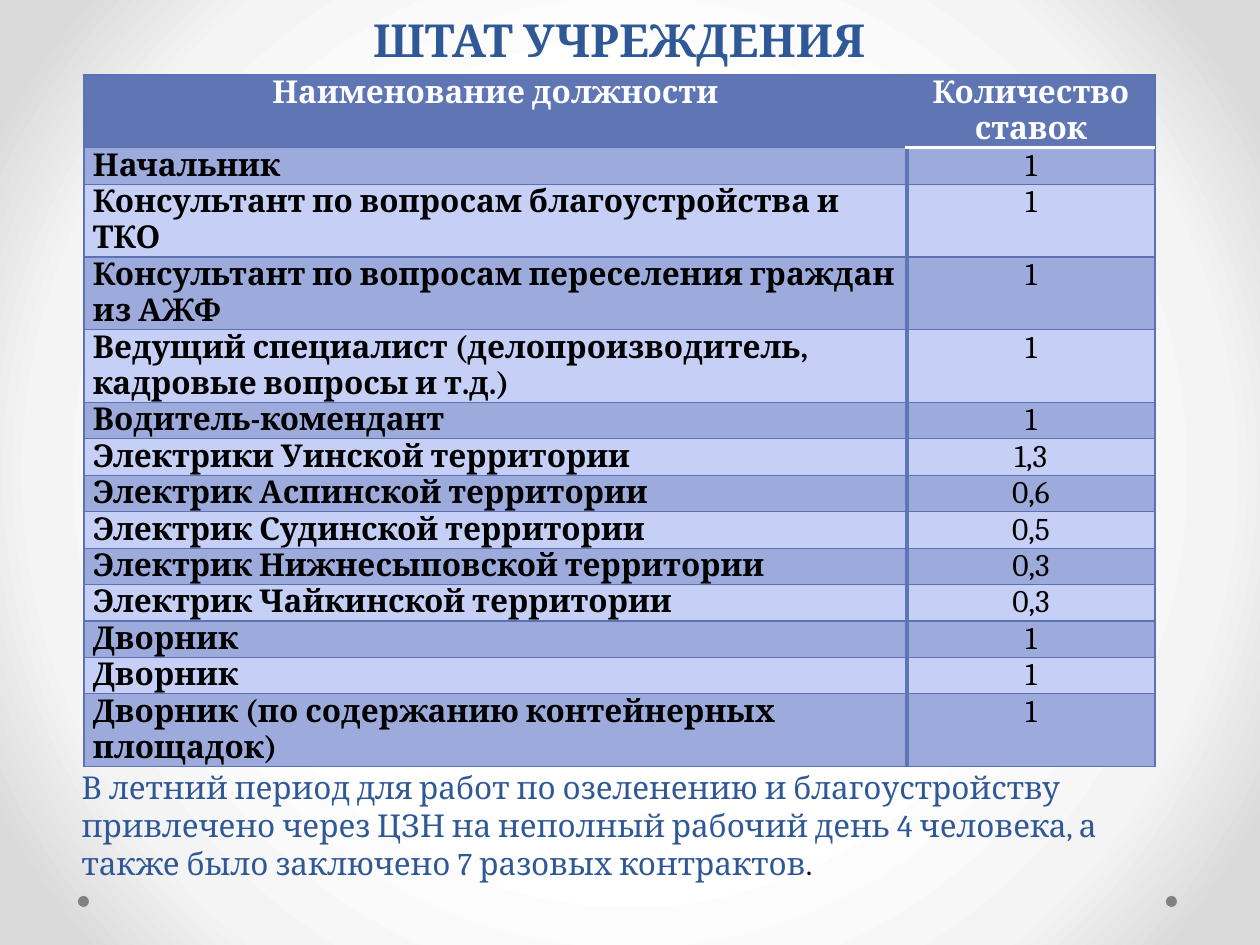
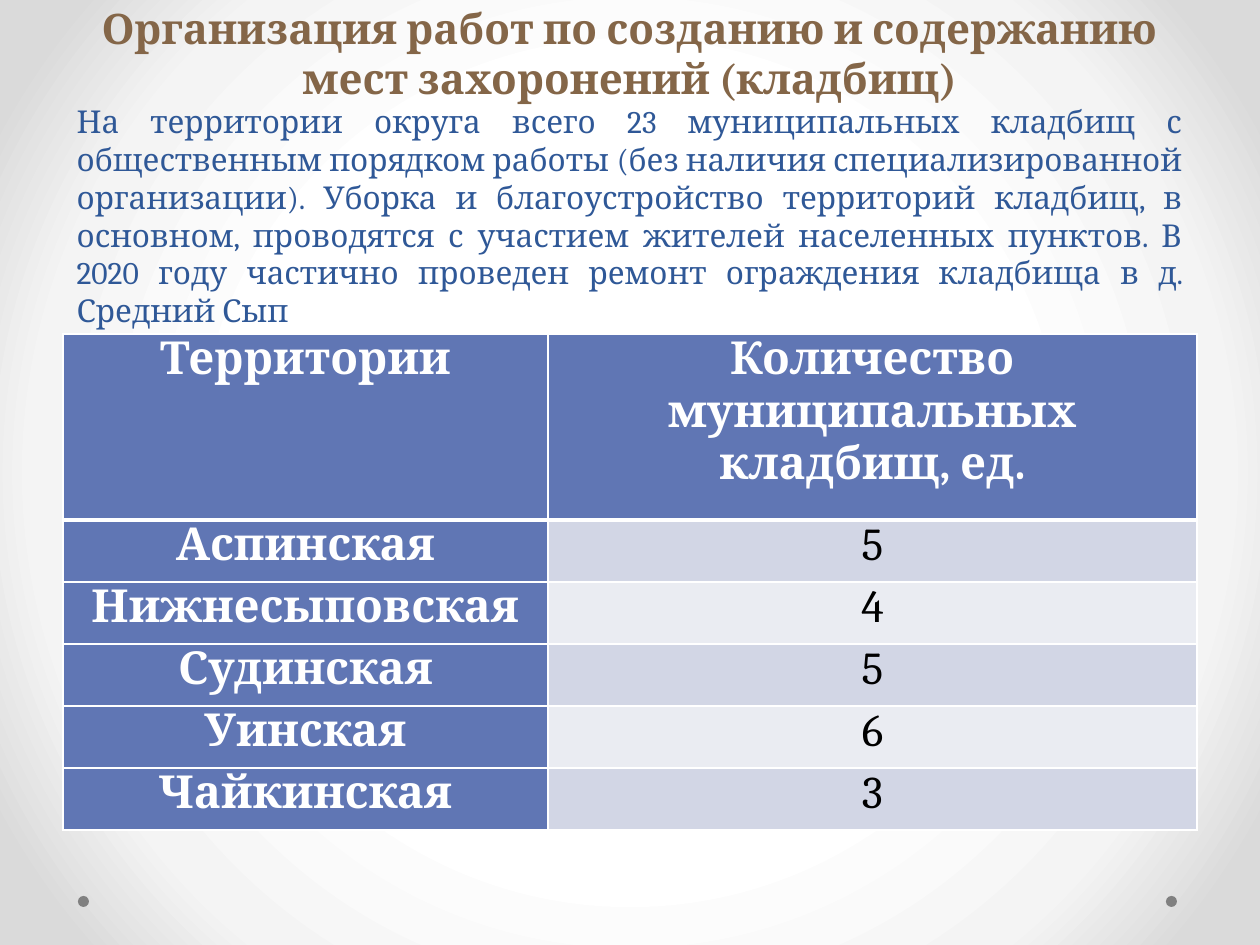
from dataclasses import dataclass

from pptx import Presentation
from pptx.dml.color import RGBColor
from pptx.enum.shapes import MSO_SHAPE
from pptx.enum.text import MSO_ANCHOR, MSO_AUTO_SIZE, PP_ALIGN
from pptx.oxml import parse_xml
from pptx.oxml.ns import nsdecls
from pptx.util import Emu, Pt

LEFT, CENTER, JUSTIFY = PP_ALIGN.LEFT, PP_ALIGN.CENTER, PP_ALIGN.JUSTIFY
MIDDLE, TOP = MSO_ANCHOR.MIDDLE, MSO_ANCHOR.TOP
NO_FIT = MSO_AUTO_SIZE.NONE
OVAL = MSO_SHAPE.OVAL


@dataclass(frozen=True)
class Theme:
    font: str = "Cambria"
    navy: str = "2F5897"
    brown: str = "846648"
    accent: str = "6076B4"
    edge: str = "5C72B2"
    white: str = "FFFFFF"
    black: str = "000000"
    dot: str = "808080"
    blues: tuple[str, str] = ("9DABDC", "C6CFF6")
    grays: tuple[str, str] = ("D2D6E5", "EAECF2")
    glow: tuple[tuple[int, str], ...] = ((50, "FFFFFF"), (76, "F4F4F4"), (92, "DADADA"))
    large: int = 26
    medium: int = 24
    small: int = 18


THEME = Theme()


@dataclass(frozen=True)
class Box:
    left: int
    top: int
    width: int
    height: int


@dataclass(frozen=True)
class Type:
    size: int
    ink: str
    bold: bool = False
    align: PP_ALIGN = CENTER


@dataclass(frozen=True)
class Line:
    ink: str
    width: float


@dataclass(frozen=True)
class Column:
    width: int
    fills: tuple[str, str]
    type: Type
    rule: Line  # line under the heading


@dataclass(frozen=True)
class Grid:
    left: int
    top: int
    columns: tuple[Column, ...]
    heights: tuple[int, ...]
    head: Type
    line: Line
    inner: Line


def px(length: int) -> Emu:
    return Emu(round(length * 914400 / 126))


def place(shape, box: Box) -> None:
    shape.left, shape.top = px(box.left), px(box.top)
    shape.width, shape.height = px(box.width), px(box.height)


def paint(shape, ink: str) -> None:
    shape.fill.solid()
    shape.fill.fore_color.rgb = RGBColor.from_string(ink)


def style(frame, look: Type) -> None:
    for para in frame.paragraphs:
        para.alignment = look.align
        para.space_before = Pt(0)
        for run in para.runs:
            font = run.font
            font.name, font.size, font.bold = THEME.font, Pt(look.size), look.bold
            font.color.rgb = RGBColor.from_string(look.ink)


def fill_holder(holder, text: str, box: Box, look: Type, anchor: MSO_ANCHOR) -> None:
    place(holder, box)
    frame = holder.text_frame
    frame.text = text
    frame.word_wrap = True
    frame.auto_size = NO_FIT
    frame.vertical_anchor = anchor
    style(frame, look)


def add_body(slide, text: str, box: Box, look: Type):
    """Fill the body placeholder with one plain paragraph without a bullet."""
    holder = slide.placeholders[1]
    fill_holder(holder, text, box, look, TOP)
    para = holder.text_frame.paragraphs[0]
    props = para._p.get_or_add_pPr()
    props.set("marL", "0")
    props.set("indent", "0")
    props.append(parse_xml(f"<a:buNone {nsdecls('a')}/>"))
    return para


def add_line(cell, side: str, line: Line) -> None:
    cell._tc.get_or_add_tcPr().append(parse_xml(
        f'<a:ln{side} {nsdecls("a")} w="{Pt(line.width)}"><a:solidFill>'
        f'<a:srgbClr val="{line.ink}"/></a:solidFill></a:ln{side}>'))


def add_grid(slide, grid: Grid, rows: list[tuple[str, ...]]) -> None:
    cols = grid.columns
    width = sum(col.width for col in cols)
    frame = slide.shapes.add_table(
        len(rows), len(cols), px(grid.left), px(grid.top), px(width), px(sum(grid.heights)))
    table = frame.table
    for c, col in enumerate(cols):
        table.columns[c].width = px(col.width)
    for r, texts in enumerate(rows):
        table.rows[r].height = px(grid.heights[r])
        for c, (col, text) in enumerate(zip(cols, texts)):
            cell = table.cell(r, c)
            cell.margin_left = cell.margin_right = px(9)
            cell.margin_top = cell.margin_bottom = 0
            cell.text = text
            style(cell.text_frame, col.type if r else grid.head)
            add_line(cell, "L", grid.inner if c else grid.line)
            add_line(cell, "R", grid.inner if c < len(cols) - 1 else grid.line)
            add_line(cell, "T", col.rule if r == 1 else grid.line)
            add_line(cell, "B", col.rule if r == 0 else grid.line)
            paint(cell, col.fills[(r - 1) % 2] if r else THEME.accent)


def dress_master(master, slide) -> None:
    """Give the master its glow and two dots, which are first drawn on a slide."""
    sheet = master.element.cSld
    for old in sheet.findall("{*}bg"):
        sheet.remove(old)
    stops = "".join(f'<a:gs pos="{pos * 1000}"><a:srgbClr val="{ink}"/></a:gs>'
                    for pos, ink in THEME.glow)
    sheet.insert(0, parse_xml(
        f'<p:bg {nsdecls("p", "a")}><p:bgPr><a:gradFill rotWithShape="1"><a:gsLst>{stops}'
        '</a:gsLst><a:path path="circle"><a:fillToRect l="50000" t="50000" r="50000" '
        'b="50000"/></a:path></a:gradFill><a:effectLst/></p:bgPr></p:bg>'))
    for num, left in enumerate((1166, 78), start=20):
        dot = slide.shapes.add_shape(OVAL, px(left), px(896), px(11), px(11))
        paint(dot, THEME.dot)
        dot.line.fill.background()
        dot.shadow.inherit = False
        dot.element.nvSpPr.cNvPr.set("id", str(num))
        sheet.spTree.append(dot.element)


STAFF = [
    ("Наименование должности", "Количество ставок"),
    ("Начальник", "1"),
    ("Консультант по вопросам благоустройства и ТКО", "1"),
    ("Консультант по вопросам переселения граждан из АЖФ", "1"),
    ("Ведущий специалист (делопроизводитель, кадровые вопросы и т.д.)", "1"),
    ("Водитель-комендант", "1"),
    ("Электрики Уинской территории", "1,3"),
    ("Электрик Аспинской территории", "0,6"),
    ("Электрик Судинской территории", "0,5"),
    ("Электрик Нижнесыповской территории", "0,3"),
    ("Электрик Чайкинской территории", "0,3"),
    ("Дворник", "1"),
    ("Дворник", "1"),
    ("Дворник (по содержанию контейнерных площадок)", "1"),
]
TALL = (0, 2, 3, 4, 13)  # staff rows with two lines of text

GRAVES = [
    ("Территории", "Количество муниципальных кладбищ, ед."),
    ("Аспинская", "5"),
    ("Нижнесыповская", "4"),
    ("Судинская", "5"),
    ("Уинская", "6"),
    ("Чайкинская", "3"),
]


def build_staff(slide) -> None:
    fill_holder(slide.shapes.title, "ШТАТ УЧРЕЖДЕНИЯ", Box(353, 2, 533, 74),
                Type(THEME.large, THEME.navy, True), MIDDLE)
    para = add_body(
        slide,
        "В летний период для работ по озеленению и благоустройству привлечено через ЦЗН "
        "на неполный рабочий день 4 человека, а также было заключено 7 разовых контрактов",
        Box(69, 762, 1111, 127), Type(THEME.small, THEME.navy, align=LEFT))
    stop = para.add_run()
    stop.text = "."
    stop.font.name, stop.font.size = THEME.font, Pt(THEME.small)
    stop.font.color.rgb = RGBColor.from_string(THEME.black)
    thin = Line(THEME.edge, 0.75)
    add_grid(slide, Grid(
        84, 75,
        (Column(823, THEME.blues, Type(THEME.small, THEME.black, True, LEFT), thin),
         Column(248, THEME.blues, Type(THEME.small, THEME.black), Line(THEME.white, 2.25))),
        tuple(72 if r in TALL else 36 for r in range(len(STAFF))),
        Type(THEME.small, THEME.white, True), thin, Line(THEME.accent, 2.25)), STAFF)


def build_graves(slide) -> None:
    fill_holder(slide.shapes.title,
                "Организация работ по созданию и содержанию\nмест захоронений (кладбищ)",
                Box(74, -5, 1111, 115), Type(THEME.medium, THEME.brown, True), MIDDLE)
    add_body(
        slide,
        "На территории округа всего 23 муниципальных кладбищ с общественным порядком работы "
        "(без наличия специализированной организации). Уборка и благоустройство территорий "
        "кладбищ, в основном, проводятся с участием жителей населенных пунктов. В 2020 году "
        "частично проведен ремонт ограждения кладбища в д. Средний Сып",
        Box(64, 96, 1131, 234), Type(THEME.small, THEME.navy, align=JUSTIFY))
    head = Type(THEME.large, THEME.white, True)
    thin, thick = Line(THEME.white, 1), Line(THEME.white, 3)
    add_grid(slide, Grid(
        63, 334,
        (Column(485, (THEME.accent, THEME.accent), head, thick),
         Column(649, THEME.grays, Type(THEME.large, THEME.black), thick)),
        (186,) + (62,) * (len(GRAVES) - 1), head, thin, thin), GRAVES)


def main() -> None:
    prs = Presentation()
    prs.slide_width, prs.slide_height = px(1260), px(945)
    layout = prs.slide_layouts[1]
    first, second = (prs.slides.add_slide(layout) for _ in range(2))
    dress_master(prs.slide_master, first)
    build_staff(first)
    build_graves(second)
    prs.save("out.pptx")


if __name__ == "__main__":
    main()
